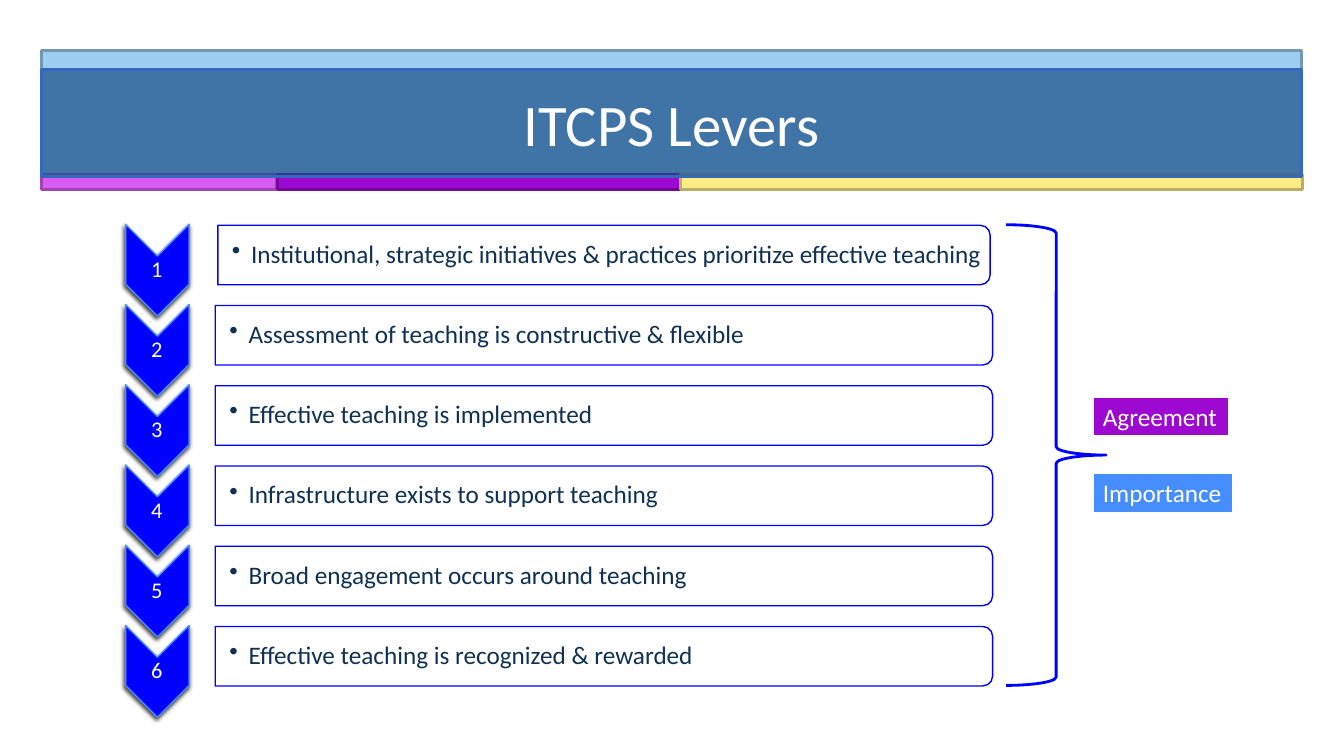
from lxml import etree
from pptx import Presentation
from pptx.dml.color import RGBColor
from pptx.enum.shapes import MSO_SHAPE as SHAPE
from pptx.enum.text import MSO_ANCHOR as ANCHOR, PP_ALIGN as ALIGN
from pptx.oxml.ns import qn
from pptx.util import Inches, Pt

BLUE, WHITE, NAVY = "0000FF", "FFFFFF", "103154"
PURPLE, SKY = "9D09D1", "468EFF"
BANDS = [
    (0.41, 0.5, 12.5, 1.24, "9CCEF1", "7398B2"),
    (0.41, 1.73, 2.33, 0.15, "DA5AF4", "A143B5"),
    (2.75, 1.73, 4, 0.15, PURPLE, "74079B"),
    (6.75, 1.73, 6.17, 0.15, "FBEC85", "BAAF62"),
]
LEVERS = [
    "Institutional, strategic initiatives & practices prioritize effective teaching",
    "Assessment of teaching is constructive & flexible",
    "Effective teaching is implemented",
    "Infrastructure exists to support teaching",
    "Broad engagement occurs around teaching",
    "Effective teaching is recognized & rewarded",
]
FIRST_ROW, LAST_ROW = 2.53, 6.51
ROW_PITCH = (LAST_ROW - FIRST_ROW) / (len(LEVERS) - 1)
CHEVRON_X, BAR_X = 1.56, 5.99


def rgb(color):
    """Turn a hex string into a colour."""
    return RGBColor.from_string(color)


def paint(shape, fill, line, width, alpha=None):
    """Set fill, outline and optional fill opacity in percent."""
    if fill:
        shape.fill.solid()
        shape.fill.fore_color.rgb = rgb(fill)
    else:
        shape.fill.background()
    shape.line.color.rgb = rgb(line)
    shape.line.width = Pt(width)
    if alpha:
        tint = shape.fill._xPr.find(f"{qn('a:solidFill')}/{qn('a:srgbClr')}")
        etree.SubElement(tint, qn("a:alpha"), val=str(alpha * 1000))


def add_block(slide, kind, left, top, width, height, fill, line, line_width=2,
              rotation=0, alpha=None):
    """Add a flat preset shape."""
    block = slide.shapes.add_shape(kind, Inches(left), Inches(top), Inches(width), Inches(height))
    block.shadow.inherit = False
    block.rotation = rotation
    paint(block, fill, line, line_width, alpha)
    return block


def add_turned(slide, kind, center_x, center_y, width, height, *colors, **style):
    """Add a shape turned a quarter, given its centre and unturned size."""
    return add_block(slide, kind, center_x - width / 2, center_y - height / 2,
                     width, height, *colors, line_width=1, rotation=90, **style)


def cast_shadow(shape):
    """Give a shape a soft dark shadow."""
    effects = shape._element.spPr.find(qn("a:effectLst"))
    shadow = etree.SubElement(effects, qn("a:outerShdw"), blurRad=str(Pt(3)),
                              dist=str(Pt(2)), dir=str(110 * 60000), rotWithShape="0")
    shade = etree.SubElement(shadow, qn("a:srgbClr"), val="000000")
    etree.SubElement(shade, qn("a:alpha"), val="75000")


def write(shape, text, size=18, color=WHITE, align=ALIGN.LEFT, wrap=True,
          insets=(0.1, 0.05, 0.1, 0.05), spacing=None, bullet=False):
    """Put one formatted paragraph in a shape."""
    frame = shape.text_frame
    frame.word_wrap = wrap
    frame.vertical_anchor = ANCHOR.MIDDLE
    (frame.margin_left, frame.margin_top,
     frame.margin_right, frame.margin_bottom) = map(Inches, insets)
    paragraph = frame.paragraphs[0]
    paragraph.alignment = align
    if spacing:
        paragraph.line_spacing = spacing
    if bullet:
        properties = paragraph._p.get_or_add_pPr()
        properties.set("marL", str(Inches(0.19)))
        properties.set("indent", str(-Inches(0.19)))
        etree.SubElement(properties, qn("a:buChar"), char="•")
    run = paragraph.add_run()
    run.text = text
    run.font.name = "Calibri"
    run.font.size = Pt(size)
    run.font.color.rgb = rgb(color)


def add_label(slide, left, center_y, width, height, text, **style):
    """Add a text box centred on a height."""
    label = slide.shapes.add_textbox(Inches(left), Inches(center_y - height / 2),
                                     Inches(width), Inches(height))
    write(label, text, spacing=0.9, **style)


def add_header(slide):
    """Draw the colour bands and set the title over them."""
    for *place, fill, line in BANDS:
        add_block(slide, SHAPE.RECTANGLE, *place, fill, line)
    title = slide.shapes.title
    title.left, title.top, title.width, title.height = map(Inches, (0.41, 0.69, 12.5, 1.06))
    paint(title, "1A4F88", "3469BD", 2, alpha=70)
    write(title, "ITCPS Levers", size=42, align=ALIGN.CENTER)
    slide.shapes._spTree.append(title._element)


def add_lever(slide, index, lever):
    """Draw one numbered chevron with its lever."""
    middle = FIRST_ROW + index * ROW_PITCH
    bar_length = 7.71 if index else 7.66
    chevron_middle = middle + 0.15
    cast_shadow(add_turned(slide, SHAPE.CHEVRON, CHEVRON_X, chevron_middle, 0.91, 0.63, BLUE, SKY))
    add_label(slide, CHEVRON_X - 0.32, chevron_middle, 0.63, 0.27, str(index + 1),
              size=16, align=ALIGN.CENTER, insets=(0.01,) * 4)
    add_turned(slide, SHAPE.ROUND_2_SAME_RECTANGLE, BAR_X, middle, 0.59, bar_length,
               WHITE, BLUE, alpha=90)
    add_label(slide, BAR_X - bar_length / 2, middle, bar_length - 0.03, 0.53, lever,
              color=NAVY, insets=(0.14, 0.01, 0.01, 0.01), bullet=True)


def add_tag(slide, top, width, text, fill):
    """Add a coloured rating tag."""
    tag = add_block(slide, SHAPE.RECTANGLE, 10.84, top, width, 0.4, fill, WHITE)
    write(tag, text, wrap=False)


def main():
    """Build and save the slide."""
    deck = Presentation()
    deck.slide_width, deck.slide_height = Inches(13.33), Inches(7.5)
    slide = deck.slides.add_slide(deck.slide_layouts[5])
    add_header(slide)
    for index, lever in enumerate(LEVERS):
        add_lever(slide, index, lever)
    add_block(slide, SHAPE.RIGHT_BRACE, 9.98, 2.23, 0.99, 4.57, None, BLUE)
    add_tag(slide, 3.93, 1.35, "Agreement", PURPLE)
    add_tag(slide, 4.69, 1.39, "Importance", SKY)
    deck.save("out.pptx")


if __name__ == "__main__":
    main()
